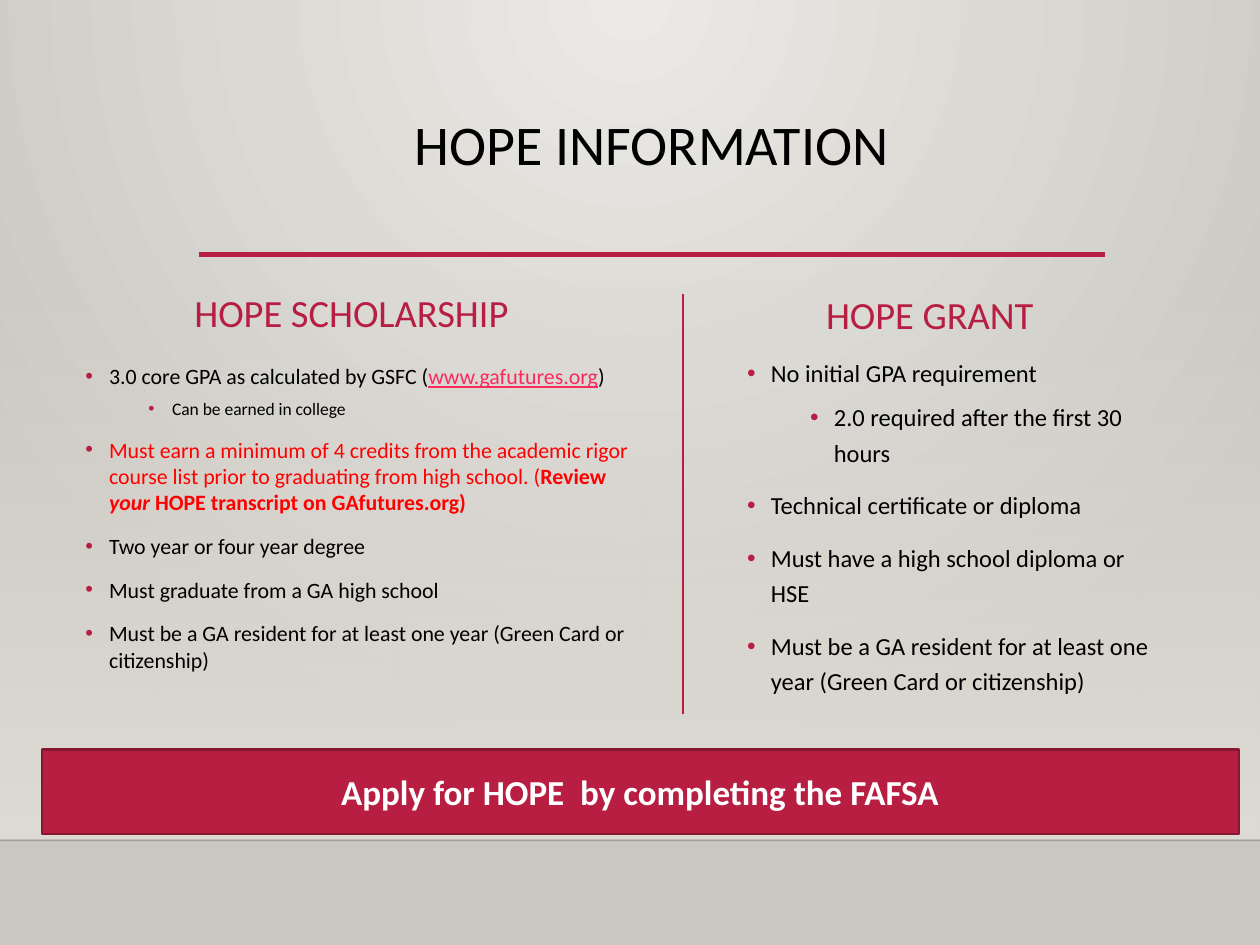
from dataclasses import dataclass
from lxml.etree import SubElement as Sub
from pptx import Presentation
from pptx.dml.color import RGBColor as RGB
from pptx.enum.shapes import MSO_CONNECTOR as LINK, MSO_SHAPE as SHAPE
from pptx.enum.text import MSO_ANCHOR as ANCHOR, PP_ALIGN as ALIGN
from pptx.oxml.ns import qn
from pptx.util import Cm, Pt


@dataclass
class Theme:
    font: str = "Calibri"
    red: str = "B71E42"
    edge: str = "871631"
    link: str = "FA2B5C"
    alert: str = "FF0000"
    ink: str = "000000"
    white: str = "FFFFFF"
    glow: str = "ECEAE7"
    stone: str = "CAC7C1"
    sand: str = "DFDBD5"
    title: float = 32
    head: float = 22
    bar: float = 20
    list: float = 14
    small: float = 12.5
    tiny: float = 10


def add_run(para, text, size, color, style=""):
    run = para.add_run()
    run.text = text
    font = run.font
    font.name, font.size = theme.font, Pt(size)
    font.color.rgb = RGB.from_string(color)
    font.bold, font.italic, font.underline = "b" in style, "i" in style, "u" in style


def add_box(left, top, width, height, anchor):
    box = slide.shapes.add_textbox(Cm(left), Cm(top), Cm(width), Cm(height))
    frame = box.text_frame
    frame.word_wrap = True
    frame.vertical_anchor = anchor
    return frame


theme = Theme()
deck = Presentation()
deck.slide_width, deck.slide_height = Cm(25.4), Cm(19.05)
slide = deck.slides.add_slide(deck.slide_layouts[6])

back = slide.background.fill
back.gradient()
fade = slide.shapes.add_shape(SHAPE.RECTANGLE, 0, Cm(5.59), Cm(25.4), Cm(11.34))
fade.shadow.inherit = False
fade.line.fill.background()
fade.fill.gradient()
fade.fill.gradient_angle = 270
for fill, tones in ((back, (theme.glow, theme.stone)), (fade.fill, (theme.sand, theme.sand))):
    for stop, tone, place in zip(fill.gradient_stops, tones, (0, 1)):
        stop.color.rgb = RGB.from_string(tone)
        stop.position = place

grad = slide.element.find(".//" + qn("p:bg")).find(".//" + qn("a:gradFill"))
grad.remove(grad.find(qn("a:lin")))
ring = Sub(grad, qn("a:path"), path="circle")
Sub(ring, qn("a:fillToRect"), l="43000", t="0", r="43000", b="100000")
clear = fade.element.spPr.find(".//" + qn("a:srgbClr"))
Sub(clear, qn("a:alpha"), val="0")

lines = (
    (0, 16.94, 25.4, 16.94, theme.ink, 1, 20),
    (4.01, 5.13, 22.28, 5.13, theme.red, 2.5, 100),
    (13.77, 5.92, 13.77, 14.4, theme.red, 0.75, 100),
)
for x1, y1, x2, y2, color, width, alpha in lines:
    line = slide.shapes.add_connector(LINK.STRAIGHT, Cm(x1), Cm(y1), Cm(x2), Cm(y2))
    line.line.color.rgb = RGB.from_string(color)
    line.line.width = Pt(width)
    props = line.element.spPr
    Sub(props, qn("a:effectLst"))
    if alpha < 100:
        Sub(props.find(".//" + qn("a:srgbClr")), qn("a:alpha"), val=str(alpha * 1000))

heads = (
    ("HOPE INFORMATION", (4.01, 2.24, 18.26, 2.95), ANCHOR.TOP, 0.9, theme.title, theme.ink),
    ("HOPE SCHOLARSHIP", (2.74, 5.61, 8.69, 1.27), ANCHOR.BOTTOM, 1.0, theme.head, theme.red),
    ("HOPE GRANT", (14.4, 5.66, 8.69, 1.27), ANCHOR.BOTTOM, 1.0, theme.head, theme.red),
)
for text, place, anchor, space, size, color in heads:
    para = add_box(*place, anchor).paragraphs[0]
    para.alignment = ALIGN.CENTER
    para.line_spacing = space
    add_run(para, text, size, color)

home = "Must be a GA resident for at least one year (Green Card or citizenship)"
award = (
    (0, (("3.0 core GPA as calculated by GSFC (", theme.ink),
         ("www.gafutures.org", theme.link, "u"), (")", theme.ink))),
    (1, (("Can be earned in college", theme.ink),)),
    (0, (("Must earn a minimum of 4 credits from the academic rigor course list "
          "prior to graduating from high school. (", theme.alert),
         ("Review ", theme.alert, "b"), ("your ", theme.alert, "bi"),
         ("HOPE transcript on GAfutures.org)", theme.alert, "b"))),
    (0, (("Two year or four year degree", theme.ink),)),
    (0, (("Must graduate from a GA high school", theme.ink),)),
    (0, ((home, theme.ink),)),
)
grant = (
    (0, (("No initial GPA requirement", theme.ink),)),
    (1, (("2.0 required after the first 30 hours", theme.ink),)),
    (0, (("Technical certificate or diploma", theme.ink),)),
    (0, (("Must have a high school diploma or HSE", theme.ink),)),
    (0, ((home, theme.ink),)),
)
lists = (
    (award, (1.47, 7.19, 11.86, 7.75), 1.0, (theme.small, theme.tiny)),
    (grant, (14.81, 6.98, 8.69, 7.75), 1.2, (theme.list, theme.list)),
)
for items, place, space, sizes in lists:
    frame = add_box(*place, ANCHOR.TOP)
    for row, (level, parts) in enumerate(items):
        para = frame.add_paragraph() if row else frame.paragraphs[0]
        para.level = level
        para.line_spacing = space
        para.space_before = Pt((10, 5)[level] if row else 0)
        props = para._p.get_or_add_pPr()
        props.set("marL", str(Cm((0.48, 1.75)[level])))
        props.set("indent", str(Cm(-0.48)))
        Sub(Sub(props, qn("a:buClr")), qn("a:srgbClr"), val=theme.red)
        Sub(props, qn("a:buFont"), typeface="Arial")
        Sub(props, qn("a:buChar"), char="•")
        for text, *look in parts:
            add_run(para, text, sizes[level], *look)

bar = slide.shapes.add_shape(SHAPE.FLOWCHART_PROCESS, Cm(0.84), Cm(15.11), Cm(24.13), Cm(1.7))
bar.shadow.inherit = False
bar.fill.solid()
bar.fill.fore_color.rgb = RGB.from_string(theme.red)
bar.line.color.rgb = RGB.from_string(theme.edge)
bar.line.width = Pt(1.25)
bar.text_frame.vertical_anchor = ANCHOR.MIDDLE
para = bar.text_frame.paragraphs[0]
para.alignment = ALIGN.CENTER
add_run(para, "Apply for HOPE  by completing the FAFSA", theme.bar, theme.white, "b")

deck.save("out.pptx")
